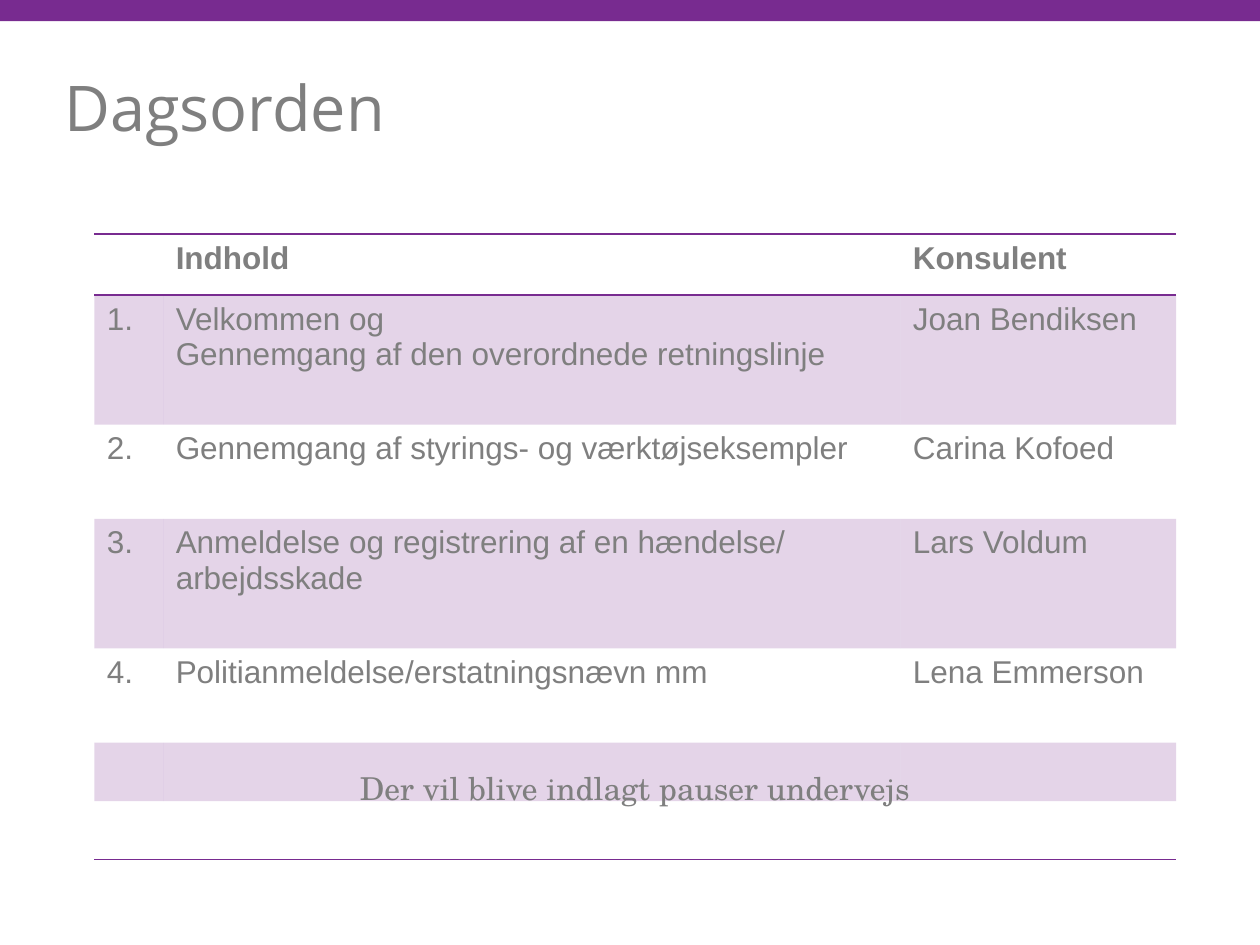
from lxml.etree import SubElement
from pptx import Presentation
from pptx.dml.color import RGBColor as Rgb
from pptx.enum.shapes import MSO_SHAPE as Shape
from pptx.enum.text import PP_ALIGN as Align
from pptx.oxml import parse_xml
from pptx.oxml.ns import qn
from pptx.util import Cm, Pt

COLORS = {"purple": "782B90", "grey": "7F7F7F"}
NAMESPACE = "http://schemas.openxmlformats.org/drawingml/2006/main"
PLAIN_TABLE = "{2D5ABB26-0587-4C30-8999-92F81FD0307C}"

AGENDA = [
    ("", "Indhold", "Konsulent"),
    ("1.", "Velkommen og\nGennemgang af den overordnede retningslinje", "Joan Bendiksen"),
    ("2.", "Gennemgang af styrings- og værktøjseksempler", "Carina Kofoed"),
    ("3.", "Anmeldelse og registrering af en hændelse/ arbejdsskade", "Lars Voldum"),
    ("4.", "Politianmeldelse/erstatningsnævn mm", "Lena Emmerson"),
    ("", "", ""),
    ("", "", ""),
]
COLUMN_WIDTHS = [1.39, 14.86, 5.56]
ROW_HEIGHTS = [1.23, 2.61, 1.9, 2.61, 1.9, 1.18, 1.18]


class SlideBuilder:
    def __init__(self, slide):
        self.slide = slide

    def style(self, frame, font, size, bold=False):
        for paragraph in frame.paragraphs:
            paragraph.font.size = Pt(size)
            for run in paragraph.runs:
                run.font.name = font
                run.font.size = Pt(size)
                run.font.bold = bold
                run.font.color.rgb = Rgb.from_string(COLORS["grey"])

    def bar(self, left, top, width, height):
        bar = self.slide.shapes.add_shape(
            Shape.RECTANGLE, Cm(left), Cm(top), Cm(width), Cm(height))
        bar.shadow.inherit = False
        bar.fill.solid()
        bar.fill.fore_color.rgb = Rgb.from_string(COLORS["purple"])
        bar.line.fill.background()

    def text(self, words, left, top, width, height, font, size,
             align=Align.LEFT, spacing=1.0):
        frame = self.slide.shapes.add_textbox(
            Cm(left), Cm(top), Cm(width), Cm(height)).text_frame
        frame.word_wrap = True
        frame.margin_left = frame.margin_right = 0
        frame.margin_top = frame.margin_bottom = 0
        frame.text = words
        frame.paragraphs[0].alignment = align
        frame.paragraphs[0].line_spacing = spacing
        self.style(frame, font, size)

    def shade(self, cell, banded):
        if not banded:
            cell.fill.background()
            return
        cell.fill.solid()
        cell.fill.fore_color.rgb = Rgb.from_string(COLORS["purple"])
        tint = next(cell._tc.tcPr.iter(qn("a:srgbClr")))
        SubElement(tint, qn("a:alpha"), val="20000")

    def borders(self, cell, sides):
        # Border lines come before the fill in the cell properties
        for position, side in enumerate(sides):
            cell._tc.tcPr.insert(position, parse_xml(
                f'<a:ln{side} xmlns:a="{NAMESPACE}" w="12700"><a:solidFill>'
                f'<a:srgbClr val="{COLORS["purple"]}"/></a:solidFill></a:ln{side}>'))

    def table(self, rows, left, top, widths, heights, font, size):
        table = self.slide.shapes.add_table(
            len(rows), len(widths), Cm(left), Cm(top),
            Cm(sum(widths)), Cm(sum(heights))).table
        table.first_row = table.horz_banding = False
        next(table._tbl.iter(qn("a:tableStyleId"))).text = PLAIN_TABLE
        for column, width in zip(table.columns, widths):
            column.width = Cm(width)
        for row, height in zip(table.rows, heights):
            row.height = Cm(height)

        rules = {0: "TB", len(rows) - 1: "B"}
        for number, entries in enumerate(rows):
            for column, words in enumerate(entries):
                cell = table.cell(number, column)
                cell.text_frame.text = words
                self.style(cell.text_frame, font, size, bold=number == 0)
                self.shade(cell, banded=number % 2 == 1)
                self.borders(cell, rules.get(number, ""))


def main():
    deck = Presentation()
    deck.slide_width, deck.slide_height = Cm(25.4), Cm(19.05)
    agenda = SlideBuilder(deck.slides.add_slide(deck.slide_layouts[6]))

    # Top band and heading
    agenda.bar(0, 0, 25.4, 0.43)
    agenda.text("Dagsorden", 1.3, 1.63, 22.7, 3.1, "Open Sans", 36, spacing=0.83)

    # Agenda table
    agenda.table(AGENDA, 1.9, 4.72, COLUMN_WIDTHS, ROW_HEIGHTS, "Arial", 18)

    # Note about breaks
    agenda.text("Der vil blive indlagt pauser undervejs", 5.9, 15.5, 13.8, 0.76,
                "TeX Gyre Schola", 18, align=Align.CENTER)

    deck.save("out.pptx")


if __name__ == "__main__":
    main()
